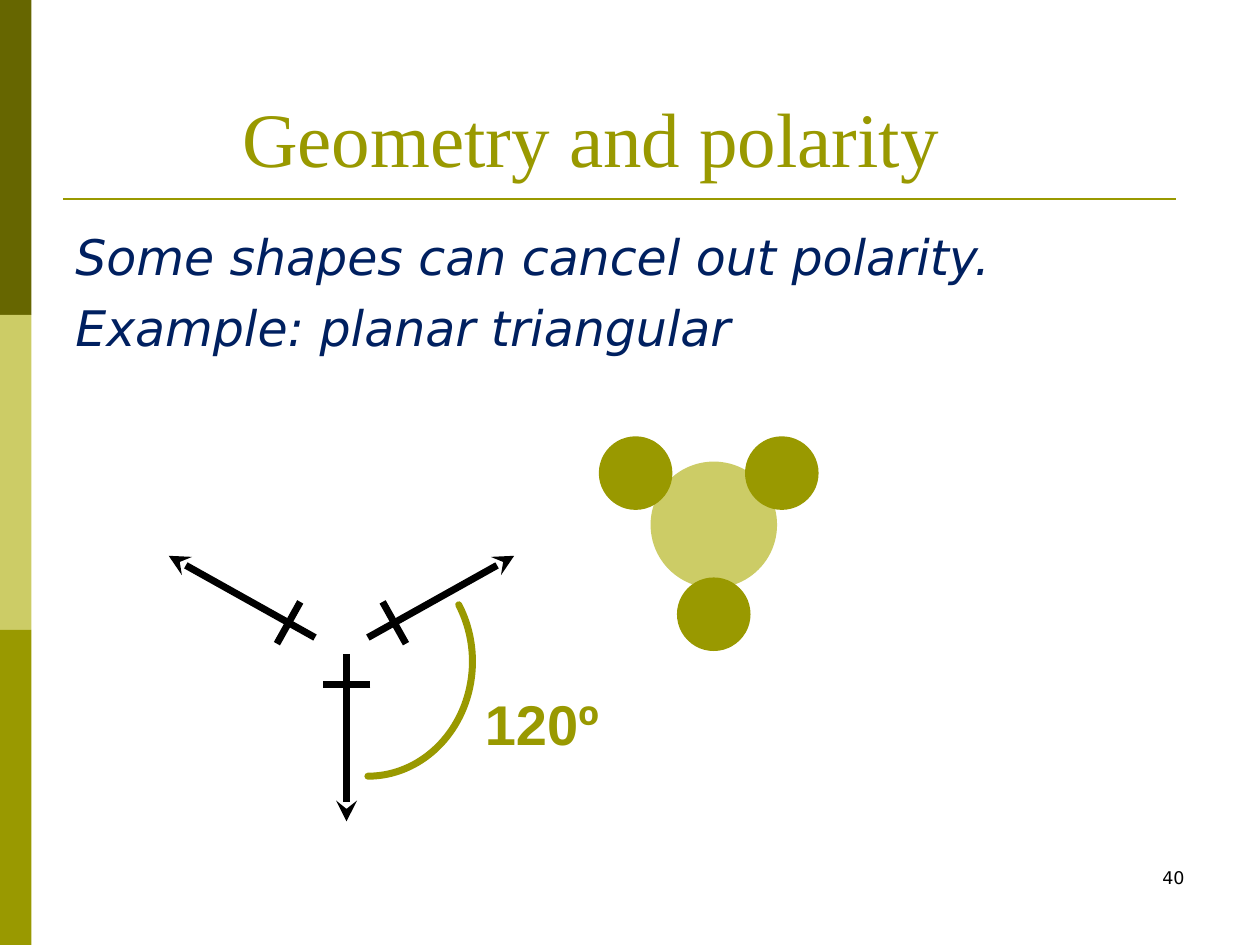
from dataclasses import dataclass
from math import cos, radians, sin

from lxml import etree
from pptx import Presentation
from pptx import util as u
from pptx.dml.color import RGBColor
from pptx.enum import shapes, text
from pptx.oxml.ns import qn

# The slide is a grid of square cells: 100 columns by 75 rows.
COLUMNS, ROWS = 100, 75
CELL = u.Inches(0.1)

DARK, OLIVE, PALE = "666600", "999900", "CCCC66"
BLACK, NAVY = "000000", "002060"


@dataclass(frozen=True)
class Area:
    left: float
    top: float
    width: float
    height: float

    def lengths(self) -> list[int]:
        return [cells(n) for n in (self.left, self.top, self.width, self.height)]


@dataclass(frozen=True)
class Atom:
    left: float
    top: float
    size: float
    color: str


@dataclass(frozen=True)
class Dipole:
    """A crossed arrow: its start and its direction, clockwise from the right."""
    column: float
    row: float
    degrees: float


BANDS = (DARK, PALE, OLIVE)
ATOMS = (
    Atom(51.7, 36.7, 9.9, PALE),
    Atom(59.2, 34.7, 5.7, OLIVE),
    Atom(47.6, 34.7, 5.7, OLIVE),
    Atom(53.8, 45.9, 5.7, OLIVE),
)
DIPOLES = (
    Dipole(27.5, 51.9, 90),
    Dipole(29.2, 50.6, -29.2),
    Dipole(25, 50.6, 209.2),
)
ARROW_LENGTH, CROSS_OFFSET, CROSS_HALF = 13.3, 2.4, 1.9


def cells(count: float) -> int:
    return round(count * CELL)


def rgb(color: str) -> RGBColor:
    return RGBColor.from_string(color)


def add_solid(page, kind, area: Area, color: str, outline: float = 0) -> None:
    solid = page.shapes.add_shape(kind, *area.lengths())
    solid.shadow.inherit = False
    solid.fill.solid()
    solid.fill.fore_color.rgb = rgb(color)
    if outline:
        solid.line.color.rgb = rgb(color)
        solid.line.width = u.Pt(outline)
    else:
        solid.line.fill.background()


def add_line(page, start, end, color: str, width: float, arrow: bool = False) -> None:
    line = page.shapes.add_connector(
        shapes.MSO_CONNECTOR.STRAIGHT, *map(cells, (*start, *end)))
    line.line.color.rgb = rgb(color)
    line.line.width = u.Pt(width)
    if arrow:
        etree.SubElement(line.line._get_or_add_ln(), qn("a:tailEnd"), type="stealth")
    etree.SubElement(line._element.spPr, qn("a:effectLst"))


def add_dipole(page, dipole: Dipole) -> None:
    across, down = cos(radians(dipole.degrees)), sin(radians(dipole.degrees))

    def point(along: float, aside: float = 0) -> tuple[float, float]:
        return (dipole.column + along * across - aside * down,
                dipole.row + along * down + aside * across)

    add_line(page, point(0), point(ARROW_LENGTH), BLACK, 4, arrow=True)
    add_line(page, point(CROSS_OFFSET, -CROSS_HALF),
             point(CROSS_OFFSET, CROSS_HALF), BLACK, 4)


def add_arc(page, area: Area, start: float, end: float, color: str) -> None:
    """Draw a round-capped arc between two angles in degrees."""
    arc = page.shapes.add_shape(shapes.MSO_SHAPE.ARC, *area.lengths())
    arc.shadow.inherit = False
    # Angles are stored in 60000ths of a degree, adjustments in 100000ths.
    for index, degrees in enumerate((start, end)):
        arc.adjustments[index] = degrees * 0.6
    arc.fill.background()
    arc.line.color.rgb = rgb(color)
    arc.line.width = u.Pt(4)
    arc.line._get_or_add_ln().set("cap", "rnd")


def add_text(page, area: Area, *lines: str, font: str, size: float, color: str,
             bold: bool = False, italic: bool = False, before: float = 0,
             align=text.PP_ALIGN.LEFT, anchor=text.MSO_ANCHOR.TOP) -> None:
    box = page.shapes.add_textbox(*area.lengths())
    frame = box.text_frame
    frame.word_wrap = True
    frame.vertical_anchor = anchor
    for index, line in enumerate(lines):
        para = frame.add_paragraph() if index else frame.paragraphs[0]
        para.alignment = align
        para.space_before = u.Pt(before)
        span = para.add_run()
        span.text = line
        span.font.name = font
        span.font.size = u.Pt(size)
        span.font.bold = bold
        span.font.italic = italic
        span.font.color.rgb = rgb(color)


def main() -> None:
    deck = Presentation()
    deck.slide_width, deck.slide_height = cells(COLUMNS), cells(ROWS)
    page = deck.slides.add_slide(deck.slide_layouts[6])

    band_height = ROWS / len(BANDS)
    for index, color in enumerate(BANDS):
        add_solid(page, shapes.MSO_SHAPE.RECTANGLE,
                  Area(0, index * band_height, 2.5, band_height), color)
    add_line(page, (5, 15.8), (93.3, 15.8), OLIVE, 1.5)

    add_text(page, Area(71.7, 68.3, 23.3, 5), "40", font="DejaVu Sans",
             size=10, color=BLACK, align=text.PP_ALIGN.RIGHT)
    add_text(page, Area(4.4, 7.3, 85, 7.7), "Geometry and polarity",
             font="Times New Roman", size=44, color=OLIVE,
             align=text.PP_ALIGN.CENTER, anchor=text.MSO_ANCHOR.BOTTOM)
    add_text(page, Area(5, 17.5, 90, 49.5),
             "Some shapes can cancel out polarity.",
             "Example: planar triangular",
             font="DejaVu Sans", size=28, color=NAVY, italic=True, before=6.6)

    for atom in ATOMS:
        add_solid(page, shapes.MSO_SHAPE.OVAL,
                  Area(atom.left, atom.top, atom.size, atom.size), atom.color, 1)
    for dipole in DIPOLES:
        add_dipole(page, dipole)

    add_arc(page, Area(20.9, 43.4, 16.6, 18.2), 328, 90, OLIVE)
    add_text(page, Area(37.5, 54.2, 11.7, 6.3), "120º",
             font="Arial", size=32, color=OLIVE, bold=True)

    deck.save("out.pptx")


if __name__ == "__main__":
    main()
